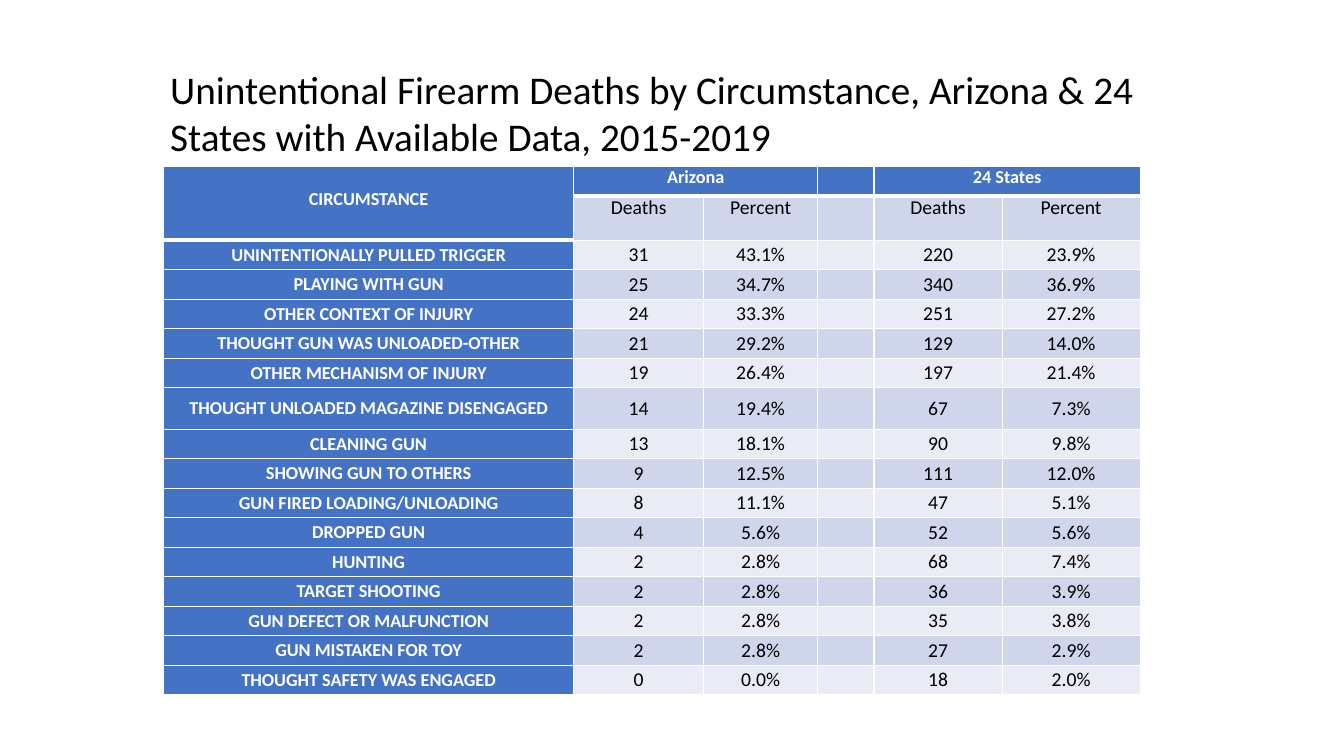
from lxml.etree import SubElement
from pptx import Presentation
from pptx.dml.color import RGBColor
from pptx.enum.text import MSO_ANCHOR, PP_ALIGN
from pptx.oxml.ns import qn
from pptx.util import Inches, Pt

WHITE = RGBColor(0xFF, 0xFF, 0xFF)
BLACK = RGBColor(0, 0, 0)
BLUE = RGBColor(0x44, 0x72, 0xC4)
BAND_DARK = RGBColor(0xCF, 0xD5, 0xEA)
BAND_LIGHT = RGBColor(0xE9, 0xEB, 0xF5)
FONT = "Calibri"

TITLE = ("Unintentional Firearm Deaths by Circumstance, Arizona & 24 States "
         "with Available Data, 2015-2019")
COLUMN_WIDTHS = [4.07, 1.29, 1.13, 0.56, 1.27, 1.37]
ROW_HEIGHT = (5.1 - 0.41) / 16
SPECIAL_HEIGHTS = {1: 0.43, 7: 0.41}
ROWS = [
    ("CIRCUMSTANCE", "Arizona", "", "", "24 States", ""),
    ("", "Deaths", "Percent", "", "Deaths", "Percent"),
    ("UNINTENTIONALLY PULLED TRIGGER", "31", "43.1%", "", "220", "23.9%"),
    ("PLAYING WITH GUN", "25", "34.7%", "", "340", "36.9%"),
    ("OTHER CONTEXT OF INJURY", "24", "33.3%", "", "251", "27.2%"),
    ("THOUGHT GUN WAS UNLOADED-OTHER", "21", "29.2%", "", "129", "14.0%"),
    ("OTHER MECHANISM OF INJURY", "19", "26.4%", "", "197", "21.4%"),
    ("THOUGHT UNLOADED MAGAZINE DISENGAGED", "14", "19.4%", "", "67", "7.3%"),
    ("CLEANING GUN", "13", "18.1%", "", "90", "9.8%"),
    ("SHOWING GUN TO OTHERS", "9", "12.5%", "", "111", "12.0%"),
    ("GUN FIRED LOADING/UNLOADING", "8", "11.1%", "", "47", "5.1%"),
    ("DROPPED GUN", "4", "5.6%", "", "52", "5.6%"),
    ("HUNTING", "2", "2.8%", "", "68", "7.4%"),
    ("TARGET SHOOTING", "2", "2.8%", "", "36", "3.9%"),
    ("GUN DEFECT OR MALFUNCTION", "2", "2.8%", "", "35", "3.8%"),
    ("GUN MISTAKEN FOR TOY", "2", "2.8%", "", "27", "2.9%"),
    ("THOUGHT SAFETY WAS ENGAGED", "0", "0.0%", "", "18", "2.0%"),
]


def style_font(font, size, color, bold=False):
    font.name, font.size, font.bold = FONT, Pt(size), bold
    font.color.rgb = color


def add_title(slide, left, top, width, height):
    box = slide.shapes.add_textbox(*map(Inches, (left, top, width, height)))
    box.text_frame.word_wrap = True
    box.text_frame.text = TITLE
    style_font(box.text_frame.paragraphs[0].runs[0].font, 28, BLACK)


def border_width(row, column):
    """Points of the line below a cell: thick under the header cells."""
    return 3 if row == 0 or (row, column) == (1, 0) else 1


def add_borders(cell, row, column):
    properties = cell._tc.get_or_add_tcPr()
    above = border_width(row - 1, column) if row else 1
    widths = {"L": 1, "R": 1, "T": above, "B": border_width(row, column)}
    for side, points in widths.items():
        line = SubElement(properties, qn(f"a:ln{side}"), w=str(Pt(points)))
        fill = SubElement(line, qn("a:solidFill"))
        SubElement(fill, qn("a:srgbClr"), val=str(WHITE))


def fill_cell(cell, row, column, text):
    is_header = row == 0 or column == 0
    size = 13 if is_header else 14
    add_borders(cell, row, column)
    cell.fill.solid()
    band = BAND_DARK if row % 2 else BAND_LIGHT
    cell.fill.fore_color.rgb = BLUE if is_header else band
    cell.margin_left = cell.margin_right = Inches(0.1)
    cell.margin_top = cell.margin_bottom = 0
    cell.vertical_anchor = MSO_ANCHOR.TOP if row < 2 else MSO_ANCHOR.MIDDLE
    para = cell.text_frame.paragraphs[0]
    para.alignment = PP_ALIGN.CENTER
    if text:
        para.text = text
        style_font(para.runs[0].font, size, WHITE if is_header else BLACK, is_header)
    else:
        # An empty cell would otherwise stretch its row to 18 pt text.
        SubElement(para._p, qn("a:endParaRPr"), sz=str(size * 100))


def add_circumstance_table(slide, left, top, width, height):
    frame = slide.shapes.add_table(len(ROWS), len(COLUMN_WIDTHS),
                                   *map(Inches, (left, top, width, height)))
    table = frame.table
    table.first_row = table.horz_banding = False
    for column, column_width in zip(table.columns, COLUMN_WIDTHS):
        column.width = Inches(column_width)
    for r, texts in enumerate(ROWS):
        table.rows[r].height = Inches(SPECIAL_HEIGHTS.get(r, ROW_HEIGHT))
        for c, text in enumerate(texts):
            fill_cell(table.cell(r, c), r, c, text)
    for start, end in [((0, 0), (1, 0)), ((0, 1), (0, 2)), ((0, 4), (0, 5))]:
        table.cell(*start).merge(table.cell(*end))
    table.cell(0, 0).margin_top = Inches(0.22)


def main():
    deck = Presentation()
    deck.slide_width, deck.slide_height = Inches(13.33), Inches(7.5)
    slide = deck.slides.add_slide(deck.slide_layouts[6])
    add_circumstance_table(slide, 1.62, 1.65, 9.7, 5.24)
    add_title(slide, 1.59, 0.6, 9.76, 1.04)
    deck.save("out.pptx")


if __name__ == "__main__":
    main()
